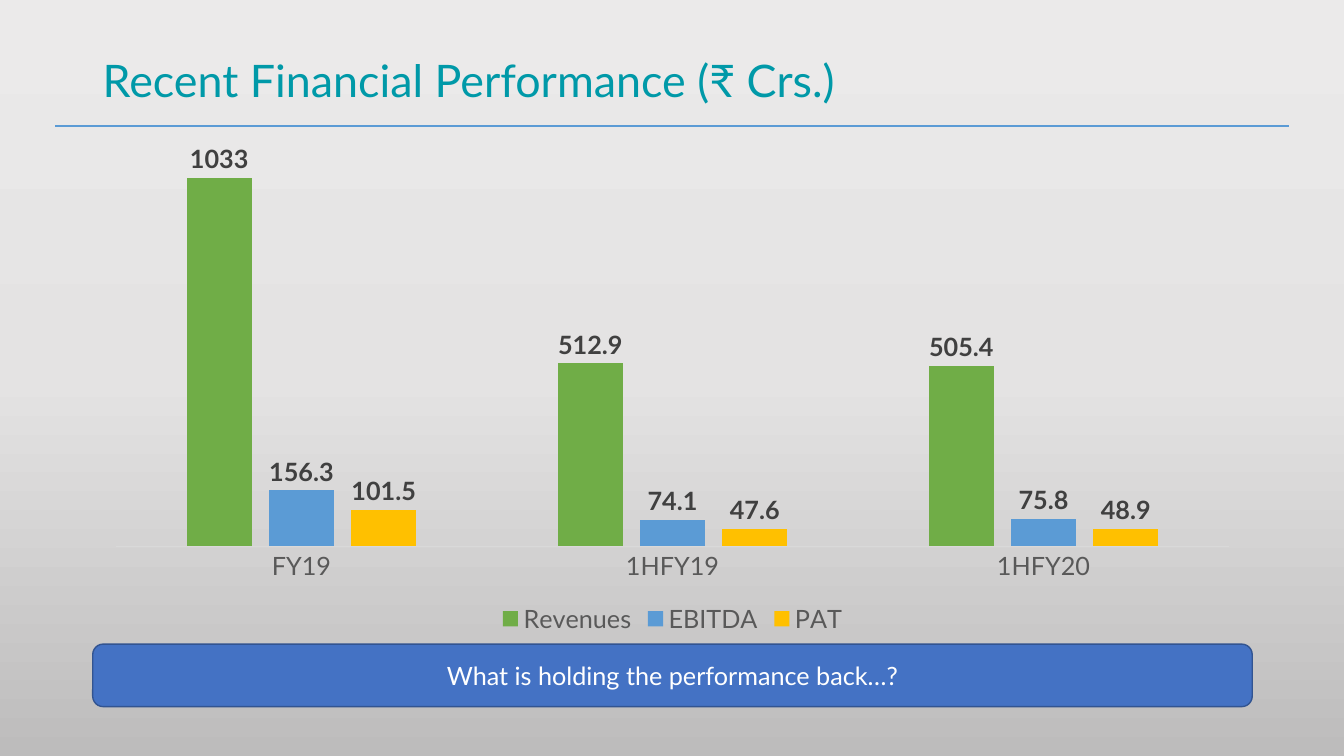
"""Build the recent financial performance slide."""
from dataclasses import dataclass
from typing import Any

from lxml import etree
from pptx import Presentation, util as u
from pptx.chart import data as cd
from pptx.dml import color as dc
from pptx.enum import chart as ce, shapes as se, text as te
from pptx.oxml import ns

PX = 9144
FONT = "Lato"
HUE = {
    "title": "0099A8", "rule": "5B9BD5", "green": "70AD47", "blue": "5B9BD5",
    "gold": "FFC000", "label": "404040", "grey": "595959", "axis": "D9D9D9",
    "bar": "4472C4", "edge": "325491", "white": "FFFFFF",
}
FADE = {0: "EBEAEA", 50: "E4E3E3", 100: "BDBCBC"}
TERMS = ("FY19", "1HFY19", "1HFY20")


@dataclass(frozen=True)
class Series:
    name: str
    hue: str
    vals: tuple[float, ...]


@dataclass(frozen=True)
class Words:
    text: str
    box: tuple[int, int, int, int]
    size: int
    hue: str
    align: te.PP_ALIGN
    space: float


SERIES = (
    Series("Revenues", "green", (1033, 512.9, 505.4)),
    Series("EBITDA", "blue", (156.3, 74.1, 75.8)),
    Series("PAT", "gold", (101.5, 47.6, 48.9)),
)
TITLE = Words("Recent Financial Performance (₹ Crs.)", (92, 40, 1150, 84),
              32, "title", te.PP_ALIGN.LEFT, 0.9)
ASK = Words("What is holding the performance back…?", (92, 639, 1150, 62),
            18, "white", te.PP_ALIGN.CENTER, 1.0)


def emu(*px: int) -> list[int]:
    return [n * PX for n in px]


def rgb(hue: str) -> dc.RGBColor:
    return dc.RGBColor.from_string(HUE[hue])


def apply(item: Any, form: dict[str, Any]) -> None:
    for key, val in form.items():
        setattr(item, key, val)


def style(font: Any, size: int, hue: str, bold: bool = False) -> None:
    apply(font, {"name": FONT, "size": u.Pt(size), "bold": bold})
    font.color.rgb = rgb(hue)


def stroke(line: Any, hue: str, width: float) -> None:
    line.color.rgb = rgb(hue)
    line.width = u.Pt(width)


def write(shape: Any, words: Words) -> None:
    frame = shape.text_frame
    apply(frame, {"word_wrap": True, "vertical_anchor": te.MSO_ANCHOR.MIDDLE})
    para = frame.paragraphs[0]
    apply(para, {"text": words.text, "alignment": words.align,
                 "line_spacing": words.space})
    style(para.runs[0].font, words.size, words.hue)


def shade(slide: Any) -> None:
    fill = slide.background.fill
    fill.gradient()
    fill.gradient_angle = 270
    stops = slide.element.xpath(".//p:bg//a:gsLst")[0]
    for old in list(stops):
        stops.remove(old)
    for pos, hue in FADE.items():
        stop = etree.SubElement(stops, ns.qn("a:gs"), pos=str(pos * 1000))
        etree.SubElement(stop, ns.qn("a:srgbClr"), val=hue)


def rule(slide: Any) -> None:
    line = slide.shapes.add_connector(
        se.MSO_CONNECTOR.STRAIGHT, *emu(55, 125, 1278, 125))
    stroke(line.line, "rule", 1)
    etree.SubElement(line.element.spPr, ns.qn("a:effectLst"))


def plot(slide: Any) -> None:
    data = cd.CategoryChartData()
    data.categories = TERMS
    for item in SERIES:
        data.add_series(item.name, item.vals)
    chart = slide.shapes.add_chart(
        ce.XL_CHART_TYPE.COLUMN_CLUSTERED, *emu(92, 107, 1150, 527), data).chart
    apply(chart, {"has_title": False, "has_legend": True})
    style(chart.font, 10, "grey")
    apply(chart.legend, {"position": ce.XL_LEGEND_POSITION.BOTTOM,
                         "include_in_layout": False})
    style(chart.legend.font, 18, "grey")
    none = ce.XL_TICK_MARK.NONE
    axis = chart.category_axis
    apply(axis, {"major_tick_mark": none, "minor_tick_mark": none})
    style(axis.tick_labels.font, 18, "grey")
    stroke(axis.format.line, "axis", 0.75)
    apply(chart.value_axis, {"visible": False, "has_major_gridlines": False,
                             "minimum_scale": 0, "maximum_scale": 1200})
    group = chart.plots[0]
    apply(group, {"gap_width": 219, "overlap": -27, "vary_by_categories": False})
    for item, bars in zip(SERIES, group.series):
        bars.format.fill.solid()
        bars.format.fill.fore_color.rgb = rgb(item.hue)
        bars.invert_if_negative = False
        apply(bars.data_labels, {"show_value": True,
                                 "position": ce.XL_LABEL_POSITION.OUTSIDE_END})
        style(bars.data_labels.font, 18, "label", True)


def banner(slide: Any) -> None:
    shape = slide.shapes.add_shape(
        se.MSO_SHAPE.ROUNDED_RECTANGLE, *emu(*ASK.box))
    shape.shadow.inherit = False
    shape.fill.solid()
    shape.fill.fore_color.rgb = rgb("bar")
    stroke(shape.line, "edge", 1)
    write(shape, ASK)


def main() -> None:
    deck = Presentation()
    apply(deck, dict(zip(("slide_width", "slide_height"), emu(1333, 750))))
    slide = deck.slides.add_slide(deck.slide_layouts[6])
    shade(slide)
    rule(slide)
    write(slide.shapes.add_textbox(*emu(*TITLE.box)), TITLE)
    plot(slide)
    banner(slide)
    deck.save("out.pptx")


if __name__ == "__main__":
    main()
